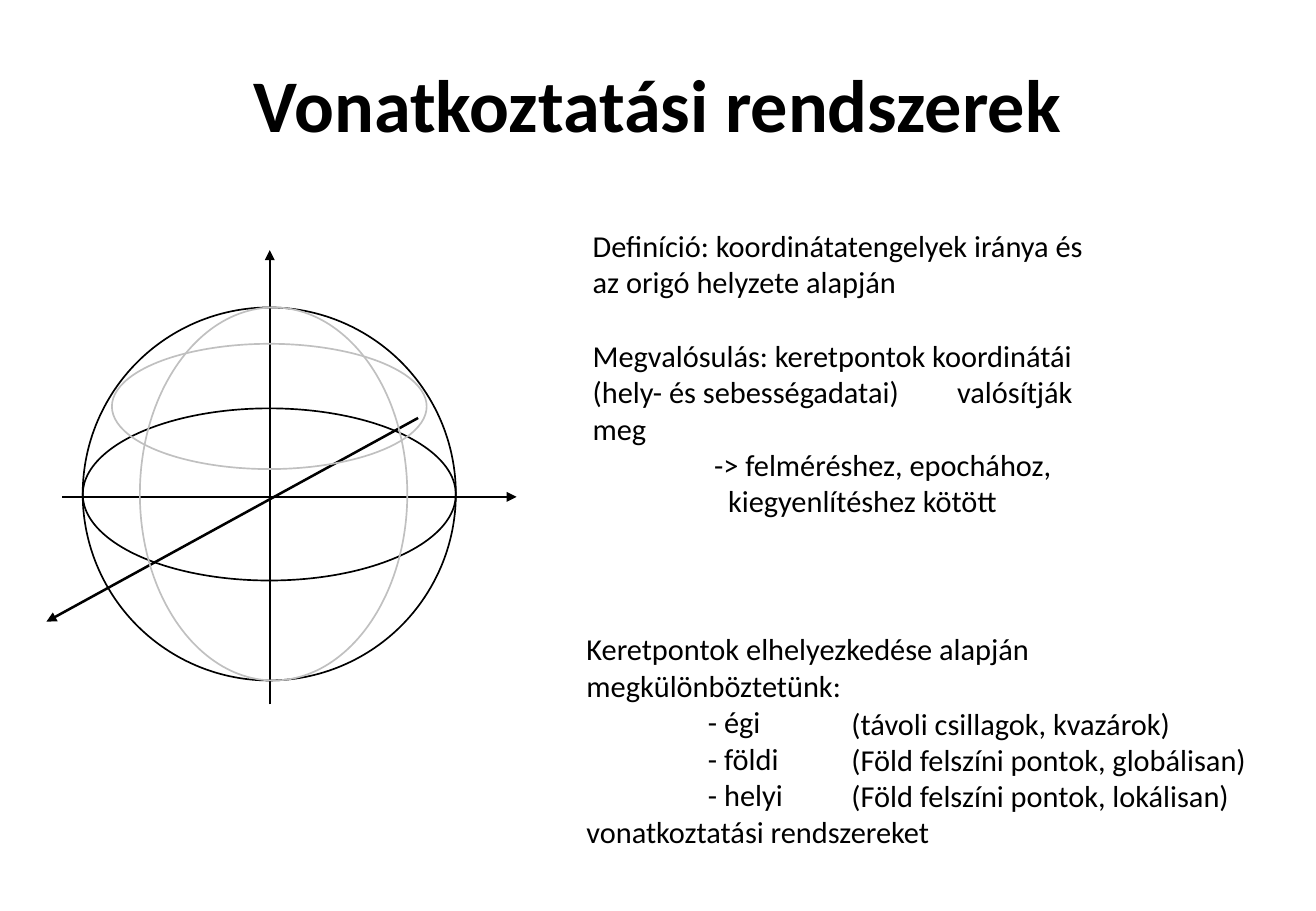
from pptx import Presentation
from pptx.dml.color import RGBColor
from pptx.enum.shapes import MSO_CONNECTOR, MSO_SHAPE
from pptx.enum.text import PP_ALIGN
from pptx.oxml.ns import qn
from pptx.util import Cm, Pt
from lxml.etree import SubElement

BLACK = RGBColor(0x00, 0x00, 0x00)
SILVER = RGBColor(0xC0, 0xC0, 0xC0)
FONT = "Calibri"
LINE_HEIGHT = 22  # points, one line of body text

# Lengths are in centimetres. Paragraphs: (text, left indent, space before in points)
TITLE = [("Vonatkoztatási rendszerek", 0, 0)]
DEFINITION = [
    ("Definíció: koordinátatengelyek iránya és\vaz origó helyzete alapján", 0, 0),
    ("Megvalósulás: keretpontok koordinátái (hely- és sebességadatai)\tvalósítják meg",
     0, LINE_HEIGHT),
    ("-> felméréshez, epochához,", 2.54, 0),
    ("kiegyenlítéshez kötött", 2.83, 0),
]
SYSTEMS = [
    ("Keretpontok elhelyezkedése alapján megkülönböztetünk:", 0, 0),
    ("- égi", 2.54, 0),
    ("- földi", 2.54, 0),
    ("- helyi", 2.54, 0),
    ("vonatkoztatási rendszereket", 0, 0),
]
EXAMPLES = [
    ("(távoli csillagok, kvazárok)", 0, 0),
    ("(Föld felszíni pontok, globálisan)", 0, 0),
    ("(Föld felszíni pontok, lokálisan)", 0, 0),
]

# Ellipses: centre x, centre y, width, height
EQUATOR_AND_SPHERE = [(5.63, 10.34, 7.8, 3.6), (5.63, 10.33, 7.8, 7.8)]
MERIDIAN_AND_PARALLEL = [(5.72, 10.33, 5.59, 7.8), (5.63, 8.5, 6.58, 2.62)]
# Axes: start x, start y, end x, end y
AXES = [
    (5.64, 14.73, 5.64, 5.23),
    (1.3, 10.39, 10.8, 10.39),
    (8.74, 8.74, 0.97, 13),
]


def add_text(slide, paragraphs, left, top, width, height, *,
             size=18, bold=False, align=PP_ALIGN.LEFT, wrap=True):
    box = slide.shapes.add_textbox(Cm(left), Cm(top), Cm(width), Cm(height))
    frame = box.text_frame
    frame.word_wrap = wrap
    for index, (text, indent, space_before) in enumerate(paragraphs):
        paragraph = frame.add_paragraph() if index else frame.paragraphs[0]
        paragraph.text = text
        paragraph.alignment = align
        if indent:
            paragraph._p.get_or_add_pPr().set("marL", str(Cm(indent)))
        if space_before:
            paragraph.space_before = Pt(space_before)
        for run in paragraph.runs:
            run.font.name = FONT
            run.font.size = Pt(size)
            run.font.bold = bold
            run.font.color.rgb = BLACK


def add_ellipse(slide, center_x, center_y, width, height, color):
    shape = slide.shapes.add_shape(
        MSO_SHAPE.OVAL, Cm(center_x - width / 2), Cm(center_y - height / 2),
        Cm(width), Cm(height))
    shape.shadow.inherit = False
    shape.fill.background()
    shape.line.color.rgb = color
    shape.line.width = Pt(1)


def add_axis(slide, *ends):
    axis = slide.shapes.add_connector(MSO_CONNECTOR.STRAIGHT, *map(Cm, ends))
    axis.line.color.rgb = BLACK
    axis.line.width = Pt(1.5)
    SubElement(axis.line._get_or_add_ln(), qn("a:tailEnd"), type="triangle")
    SubElement(axis._element.spPr, qn("a:effectLst"))


def main():
    presentation = Presentation()
    presentation.slide_width = Cm(27.51)
    presentation.slide_height = Cm(19.05)
    slide = presentation.slides.add_slide(presentation.slide_layouts[6])

    add_text(slide, TITLE, 4.98, 1.09, 17.55, 2.13,
             size=44, bold=True, align=PP_ALIGN.CENTER, wrap=False)
    for ellipse in EQUATOR_AND_SPHERE:
        add_ellipse(slide, *ellipse, BLACK)
    for ends in AXES:
        add_axis(slide, *ends)
    for ellipse in MERIDIAN_AND_PARALLEL:
        add_ellipse(slide, *ellipse, SILVER)

    add_text(slide, DEFINITION, 12.14, 4.62, 11.4, 6.4)
    systems_top = 13.06
    add_text(slide, SYSTEMS, 12.01, systems_top, 11.4, 4.88)
    # The examples start beside the third line of the systems
    examples_top = systems_top + Pt(2 * LINE_HEIGHT).cm
    add_text(slide, EXAMPLES, 17.55, examples_top, 9.8, 2.59)

    presentation.save("out.pptx")


if __name__ == "__main__":
    main()
